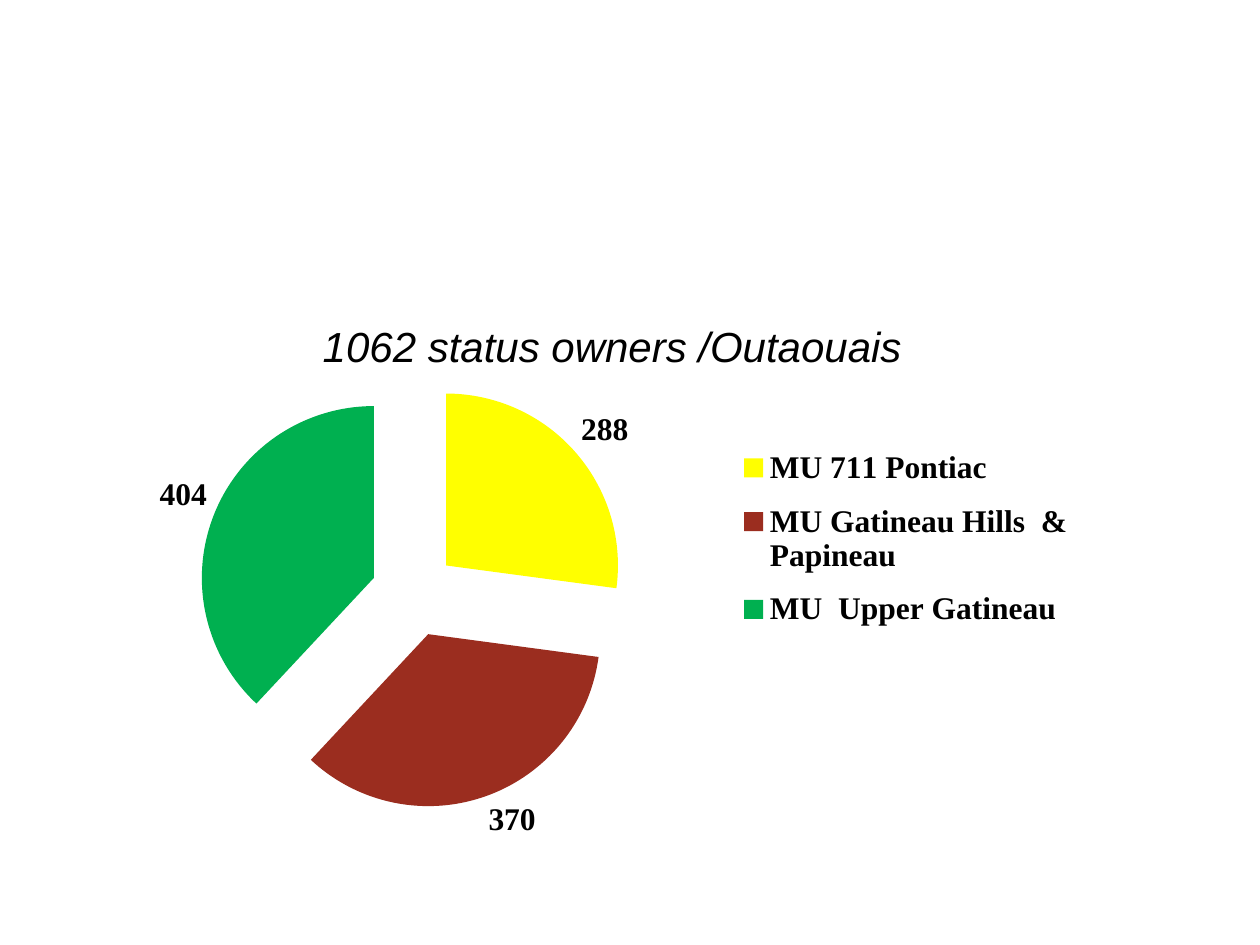
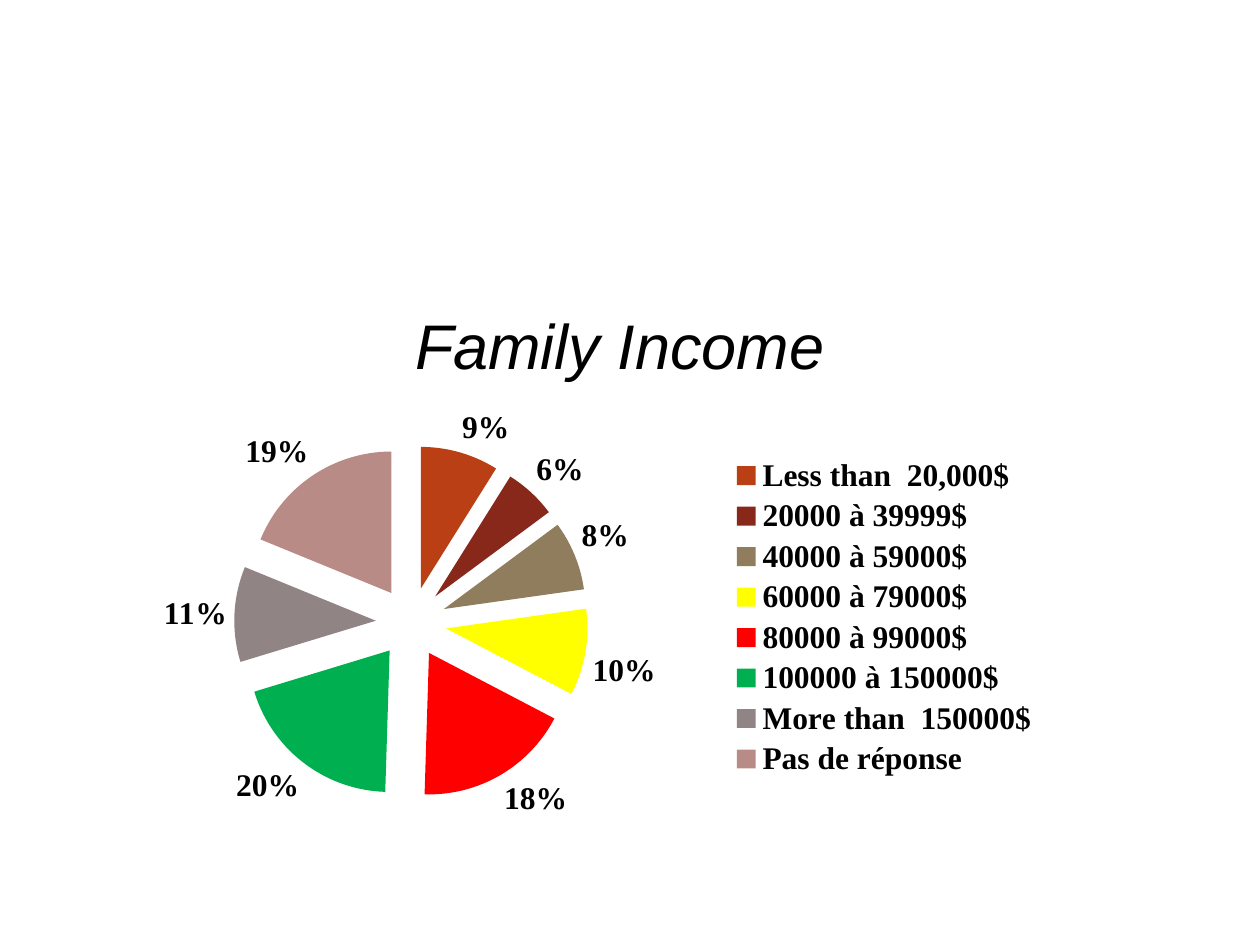
from dataclasses import dataclass

import pptx
import pptx.chart.data
import pptx.dml.color
import pptx.enum.chart
import pptx.enum.text
import pptx.oxml
import pptx.oxml.ns
import pptx.util
from pptx.util import Inches

Box = tuple[float, float, float, float]


@dataclass(frozen=True)
class Theme:
    head: str = "Arial"
    body: str = "Times New Roman"
    ink: str = "000000"
    shade: str = "808080"
    size: int = 18
    burst: int = 25
    yellow: str = "FFFF00"
    green: str = "00B050"
    rust: str = "9B2D1F"
    red: str = "FF0000"
    orange: str = "BA3F14"
    maroon: str = "88281B"
    tan: str = "8F7D5D"
    grey: str = "918485"
    rose: str = "B98B86"


@dataclass(frozen=True)
class Slice:
    label: str
    value: float
    color: str


@dataclass(frozen=True)
class Page:
    title: str
    size: int
    top: float
    inset: float
    box: Box
    form: str
    cuts: list[Slice]
    plot: Box | None = None
    key: Box | None = None


THEME = Theme()

PAGES = [
    Page("1062 status owners /Outaouais", 24, 2.12, 0.38,
         (0.72, 2.27, 7.89, 4.61), "General", [
             Slice("MU 711 Pontiac", 288, THEME.yellow),
             Slice("MU Gatineau Hills  & Papineau", 370, THEME.rust),
             Slice("MU  Upper Gatineau", 404, THEME.green),
         ], plot=(0.06, 0.16, 0.53, 0.74), key=(0.65, 0.25, 0.34, 0.37)),
    Page("Family Income", 36, 2.11, 0.26,
         (0.75, 3.1, 7.6, 3.6), "0%", [
             Slice("Less than  20,000$", 0.09, THEME.orange),
             Slice("20000 à 39999$", 0.06, THEME.maroon),
             Slice("40000 à 59000$", 0.08, THEME.tan),
             Slice("60000 à 79000$", 0.1, THEME.yellow),
             Slice("80000 à 99000$", 0.18, THEME.red),
             Slice("100000 à 150000$", 0.2, THEME.green),
             Slice("More than  150000$", 0.11, THEME.grey),
             Slice("Pas de réponse", 0.19, THEME.rose),
         ]),
]


def rgb(code: str) -> pptx.dml.color.RGBColor:
    return pptx.dml.color.RGBColor.from_string(code)


def node(tag: str, inner: str = "", attrs: str = ""):
    """Make one XML element with its children."""
    names = pptx.oxml.ns.nsdecls("a", "c")
    return pptx.oxml.parse_xml(f"<{tag} {names} {attrs}>{inner}</{tag}>")


def style(font, name: str, size: int, bold: bool = False) -> None:
    font.name = name
    font.size = pptx.util.Pt(size)
    font.bold = bold
    font.color.rgb = rgb(THEME.ink)


def place(item, area: Box, inner: bool = False) -> None:
    """Give a plot area or legend a fixed place, in shares of the chart."""
    for old in item.xpath("c:layout"):
        item.remove(old)
    target = '<c:layoutTarget val="inner"/>' if inner else ""
    modes = '<c:xMode val="edge"/><c:yMode val="edge"/>'
    sizes = "".join(f'<c:{k} val="{v}"/>' for k, v in zip("xywh", area))
    layout = node("c:layout",
                  f"<c:manualLayout>{target}{modes}{sizes}</c:manualLayout>")
    item.insert(0 if inner else 1, layout)


def add_title(slide, page: Page) -> None:
    box = slide.shapes.add_textbox(Inches(0.75), Inches(page.top),
                                   Inches(8.5), Inches(1.25))
    frame = box.text_frame
    frame.word_wrap = True
    frame.margin_right = Inches(page.inset)
    frame.vertical_anchor = pptx.enum.text.MSO_ANCHOR.MIDDLE
    para = frame.paragraphs[0]
    para.alignment = pptx.enum.text.PP_ALIGN.CENTER
    run = para.add_run()
    run.text = page.title
    style(run.font, THEME.head, page.size)
    run.font.italic = True
    # Text shadow sits right after the fill
    glow = node("a:effectLst",
                '<a:outerShdw dist="25400" dir="2700000" algn="tl">'
                f'<a:srgbClr val="{THEME.shade}"/></a:outerShdw>')
    run._r.rPr.xpath("a:solidFill")[0].addnext(glow)


def add_pie(slide, page: Page) -> None:
    data = pptx.chart.data.CategoryChartData(number_format=page.form)
    data.categories = [cut.label for cut in page.cuts]
    data.add_series("Series 1", [cut.value for cut in page.cuts])
    kind = pptx.enum.chart.XL_CHART_TYPE.PIE
    area = [Inches(n) for n in page.box]
    chart = slide.shapes.add_chart(kind, *area, data).chart
    chart.has_title = False
    style(chart.font, THEME.body, THEME.size)

    # Legend
    chart.has_legend = True
    chart.legend.position = pptx.enum.chart.XL_LEGEND_POSITION.RIGHT
    chart.legend.include_in_layout = False
    style(chart.legend.font, THEME.body, THEME.size, bold=True)

    # Slices
    plot = chart.plots[0]
    plot.vary_by_categories = True
    series = plot.series[0]
    for i, cut in enumerate(page.cuts):
        fill = series.points[i].format.fill
        fill.solid()
        fill.fore_color.rgb = rgb(cut.color)
    burst = node("c:explosion", attrs=f'val="{THEME.burst}"')
    chart.element.xpath(".//c:ser/c:tx")[0].addnext(burst)

    # Value labels
    plot.has_data_labels = True
    labels = plot.data_labels
    labels.show_value = True
    labels.show_percentage = False
    labels.number_format = page.form
    labels.number_format_is_linked = False
    labels.position = pptx.enum.chart.XL_LABEL_POSITION.OUTSIDE_END
    style(labels.font, THEME.body, THEME.size, bold=True)

    # Fixed places
    if page.plot:
        place(chart.element.xpath("c:chart/c:plotArea")[0], page.plot, True)
    if page.key:
        place(chart.element.xpath("c:chart/c:legend")[0], page.key)


def main() -> None:
    deck = pptx.Presentation()
    deck.slide_width, deck.slide_height = Inches(10), Inches(7.5)
    for page in PAGES:
        slide = deck.slides.add_slide(deck.slide_layouts[6])
        add_title(slide, page)
        add_pie(slide, page)
    deck.save("out.pptx")


if __name__ == "__main__":
    main()
